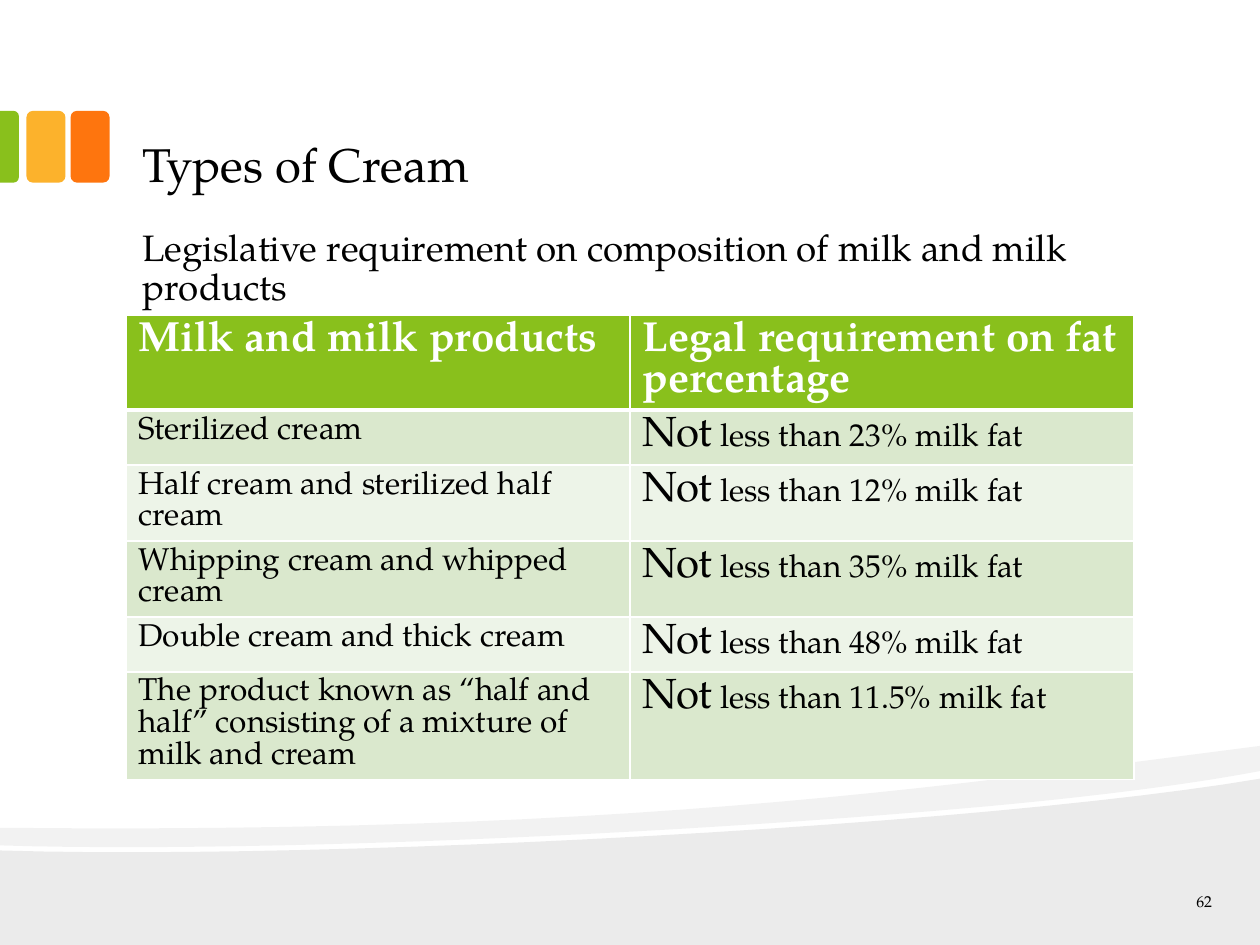
from dataclasses import dataclass

from lxml import etree
from pptx import Presentation
from pptx.dml.color import RGBColor
from pptx.enum.shapes import MSO_SHAPE
from pptx.enum.text import MSO_ANCHOR, MSO_AUTO_SIZE, PP_ALIGN
from pptx.oxml.ns import qn
from pptx.util import Inches, Pt

ROUND = MSO_SHAPE.ROUNDED_RECTANGLE
HALF = MSO_SHAPE.ROUND_2_SAME_RECTANGLE
TOP, MIDDLE, BOTTOM = MSO_ANCHOR.TOP, MSO_ANCHOR.MIDDLE, MSO_ANCHOR.BOTTOM
LEFT, RIGHT = PP_ALIGN.LEFT, PP_ALIGN.RIGHT
FIXED = MSO_AUTO_SIZE.NONE


@dataclass(frozen=True)
class Theme:
    font: str = "TeX Gyre Pagella"
    black: str = "000000"
    white: str = "FFFFFF"
    green: str = "89C01C"
    amber: str = "FCB22C"
    orange: str = "FE750E"
    bands: tuple = ("DAE8CD", "EDF4E8")
    title: float = 27
    body: float = 21
    large: float = 24
    cell: float = 18
    small: float = 9


@dataclass(frozen=True)
class Tile:
    kind: int
    box: tuple
    color: str
    turn: int = 0


@dataclass(frozen=True)
class Wave:
    points: list
    alpha: int


@dataclass(frozen=True)
class Cream:
    name: str
    fat: str


THEME = Theme()
ROW = 0.41  # least row height; rows grow with their text

TILES = [
    Tile(ROUND, (0.56, 0.88, 0.31, 0.57), THEME.orange),
    Tile(ROUND, (0.21, 0.88, 0.31, 0.57), THEME.amber),
    Tile(HALF, (-0.21, 1.09, 0.57, 0.15), THEME.green, 90),
]

HEADS = ("Milk and milk products", "Legal requirement on fat percentage")
CREAMS = [
    Cream("Sterilized cream", "23%"),
    Cream("Half cream and sterilized half cream", "12%"),
    Cream("Whipping cream and whipped cream", "35%"),
    Cream("Double cream and thick cream", "48%"),
    Cream("The product known as “half and half” consisting of a mixture "
          "of milk and cream", "11.5%"),
]


def curve(a: tuple, b: tuple, c: tuple, d: tuple, steps: int = 24) -> list:
    """Points along a cubic curve from a to d."""
    def at(t: float) -> tuple:
        u = 1 - t
        return tuple(u**3 * p + 3 * u * u * t * q + 3 * u * t * t * r + t**3 * s
                     for p, q, r, s in zip(a, b, c, d))
    return [at(i / steps) for i in range(steps + 1)]


WAVES = [
    Wave([(10, 7.5), (0, 7.5)]
         + curve((0, 6.75), (2.64, 6.83), (7.82, 6.55), (10, 6.18)), 8),
    Wave(curve((10, 6.12), (9.42, 6.23), (8.62, 6.33), (7.72, 6.41))
         + curve((7.72, 6.41), (5.23, 6.63), (1.93, 6.77), (0, 6.71))
         + curve((0, 6.57), (4.89, 6.62), (7.28, 6.27), (10, 5.92)), 5),
]


def paint(shape, color: str) -> None:
    shape.shadow.inherit = False
    shape.fill.solid()
    shape.fill.fore_color.rgb = RGBColor.from_string(color)
    shape.line.fill.background()


def draw_wave(slide, wave: Wave) -> None:
    spots = [(Inches(x), Inches(y)) for x, y in wave.points]
    pen = slide.shapes.build_freeform(*spots[0])
    pen.add_line_segments(spots[1:], close=True)
    shape = pen.convert_to_shape()
    paint(shape, THEME.black)
    tint = shape.fill._xPr.find(".//" + qn("a:srgbClr"))
    etree.SubElement(tint, qn("a:alpha"), val=str(wave.alpha * 1000))


def draw_tile(slide, tile: Tile) -> None:
    shape = slide.shapes.add_shape(tile.kind, *map(Inches, tile.box))
    shape.rotation = tile.turn
    if tile.kind == HALF:
        shape.adjustments[0] = 0.29
    paint(shape, tile.color)


def style(para, size: float, color: str = THEME.black, bold: bool = False) -> None:
    font = para.font
    font.name, font.size, font.bold = THEME.font, Pt(size), bold
    font.color.rgb = RGBColor.from_string(color)


def set_text(shape, box: tuple, text: str, size: float, anchor, align=LEFT):
    """Place a text shape and return its only paragraph."""
    shape.left, shape.top, shape.width, shape.height = map(Inches, box)
    frame = shape.text_frame
    frame.text = text
    frame.word_wrap, frame.auto_size = True, FIXED
    frame.vertical_anchor = anchor
    frame.margin_left = frame.margin_right = Inches(0.13)
    frame.margin_top = frame.margin_bottom = Inches(0.07)
    para = frame.paragraphs[0]
    para.alignment = align
    style(para, size)
    return para


def edge(cell, base: float) -> None:
    """White lines round a cell; base is the width of the lower one."""
    props = cell._tc.get_or_add_tcPr()
    for side, width in (("L", 1), ("R", 1), ("T", 1), ("B", base)):
        line = etree.SubElement(props, qn("a:ln" + side), w=str(Pt(width)))
        fill = etree.SubElement(line, qn("a:solidFill"))
        etree.SubElement(fill, qn("a:srgbClr"), val=THEME.white)


def fill_cell(cell, parts: list, size: float, back: str,
              color: str = THEME.black, head: bool = False) -> None:
    """Write (text, size) parts in a cell; size None keeps the cell's own."""
    edge(cell, 3 if head else 1)
    cell.fill.solid()
    cell.fill.fore_color.rgb = RGBColor.from_string(back)
    para = cell.text_frame.paragraphs[0]
    style(para, size, color, head)
    for text, own in parts:
        run = para.add_run()
        run.text = text
        if own:
            run.font.size = Pt(own)


def draw_table(slide) -> None:
    count = len(CREAMS) + 1
    frame = slide.shapes.add_table(count, 2, Inches(1), Inches(2.5),
                                   Inches(8), Inches(ROW * count))
    table = frame.table
    for col, head in enumerate(HEADS):
        fill_cell(table.cell(0, col), [(head, None)], THEME.large,
                  THEME.green, THEME.white, True)
    for i, cream in enumerate(CREAMS):
        back = THEME.bands[i % 2]
        fat = [("Not", THEME.large), (f" less than {cream.fat} milk fat", None)]
        for col, parts in enumerate(([(cream.name, None)], fat)):
            fill_cell(table.cell(i + 1, col), parts, THEME.cell, back)


def main() -> None:
    deck = Presentation()
    deck.slide_width, deck.slide_height = Inches(10), Inches(7.5)
    slide = deck.slides.add_slide(deck.slide_layouts[1])

    # Backdrop
    for wave in WAVES:
        draw_wave(slide, wave)
    for tile in TILES:
        draw_tile(slide, tile)

    # Title and lead line
    set_text(slide.shapes.title, (1, 0.17, 8, 1.42), "Types of Cream",
             THEME.title, BOTTOM)
    lead = set_text(slide.placeholders[1], (1, 1.75, 8, 5),
                    "Legislative requirement on composition of milk and milk products",
                    THEME.body, TOP)
    lead.line_spacing, lead.space_before = 0.9, Pt(13.5)
    props = lead._p.get_or_add_pPr()
    props.set("marL", "0")
    props.set("indent", "0")
    etree.SubElement(props, qn("a:buNone"))
    props.append(props.find(qn("a:defRPr")))

    # Table and page number
    draw_table(slide)
    page = slide.shapes.add_textbox(0, 0, 0, 0)
    set_text(page, (9.08, 7.05, 0.67, 0.2), "62", THEME.small, MIDDLE, RIGHT)

    deck.save("out.pptx")


if __name__ == "__main__":
    main()
